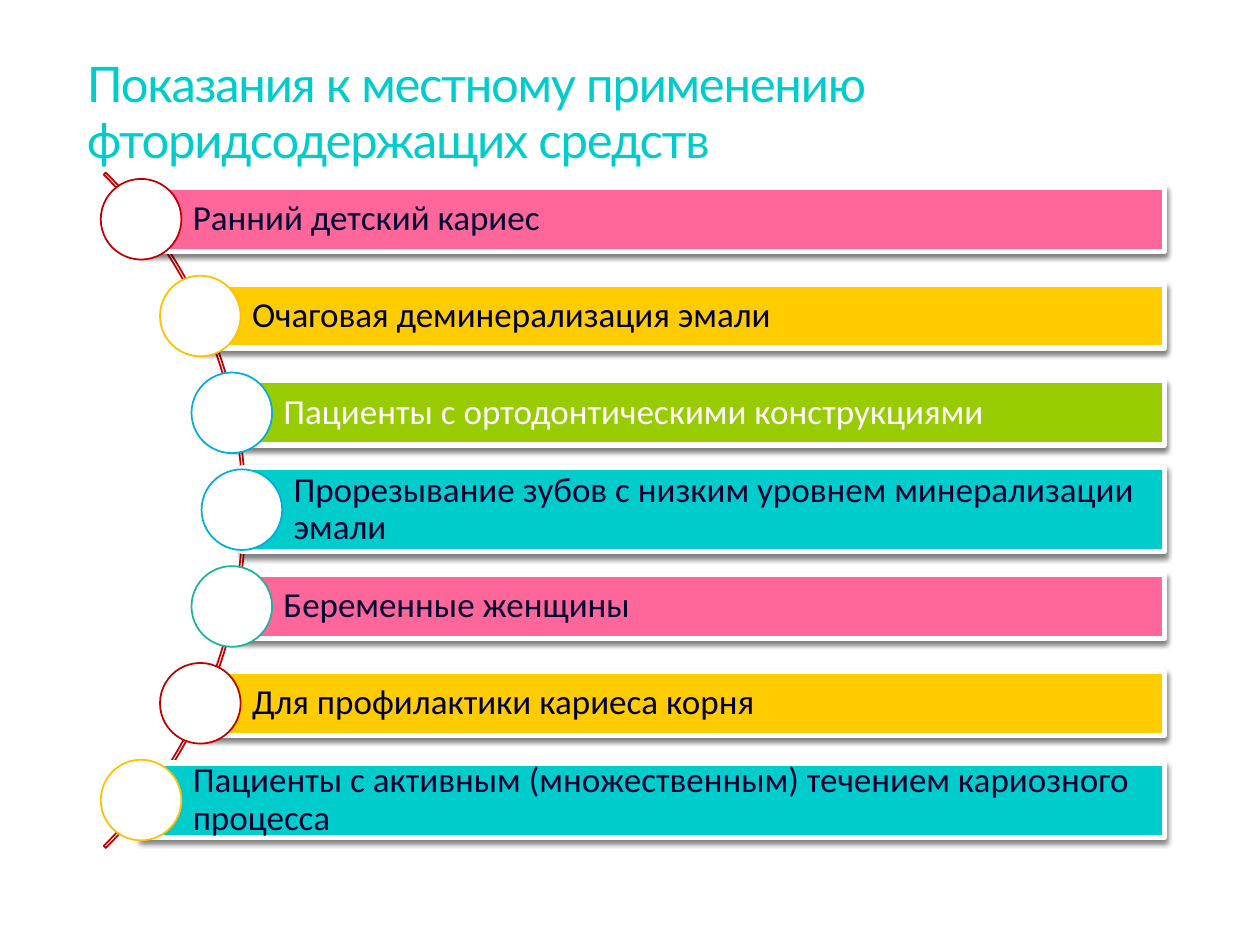
from lxml.etree import SubElement
from pptx import Presentation
from pptx.dml.color import RGBColor
from pptx.enum.shapes import MSO_SHAPE
from pptx.enum.text import MSO_ANCHOR, PP_ALIGN
from pptx.oxml.ns import qn
from pptx.util import Inches, Pt

HUES = {
    "teal": "00CCCC", "pink": "FF6699", "gold": "FFCC00", "lime": "99CC00",
    "navy": "000033", "white": "FFFFFF", "black": "000000",
    "red": "C00000", "amber": "FFC000", "blue": "00ADDC", "green": "1AB39F",
}
TITLE = "Показания к местному применению фторидсодержащих средств"

# Text, bar left, bar height, bar fill, text colour, ring colour
ROWS = [
    ("Ранний детский кариес", 1.12, 0.51, "pink", "navy", "red"),
    ("Очаговая деминерализация эмали", 1.59, 0.51, "gold", "navy", "amber"),
    ("Пациенты с ортодонтическими конструкциями",
     1.84, 0.51, "lime", "white", "blue"),
    ("Прорезывание зубов с низким уровнем минерализации эмали",
     1.92, 0.67, "teal", "navy", "blue"),
    ("Беременные женщины", 1.84, 0.51, "pink", "navy", "green"),
    ("Для профилактики кариеса корня", 1.59, 0.51, "gold", "navy", "red"),
    ("Пациенты с активным (множественным) течением кариозного процесса",
     1.12, 0.59, "teal", "navy", "amber"),
]
FIRST, LAST = 1.74, 6.35  # centres of the first and last rows
RIGHT = 9.24
RING = 0.64


def tint(name):
    return RGBColor.from_string(HUES[name])


def add_form(slide, kind, box, fill, line, width):
    form = slide.shapes.add_shape(kind, *map(Inches, box))
    form.shadow.inherit = False
    if fill:
        form.fill.solid()
        form.fill.fore_color.rgb = tint(fill)
    else:
        form.fill.background()
    form.line.color.rgb = tint(line)
    form.line.width = Pt(width)
    return form


def set_text(frame, text, font, size, hue, pads, space):
    frame.word_wrap = True
    (frame.margin_left, frame.margin_top,
     frame.margin_right, frame.margin_bottom) = map(Inches, pads)
    frame.text = text
    para = frame.paragraphs[0]
    para.alignment = PP_ALIGN.LEFT
    para.line_spacing = space
    run = para.runs[0]
    run.font.name = font
    run.font.size = Pt(size)
    run.font.color.rgb = tint(hue)
    return run


def add_shade(form):
    # Soft shadow straight below the bar
    list_el = form._element.spPr.find(qn("a:effectLst"))
    shade = SubElement(list_el, qn("a:outerShdw"), blurRad=str(Pt(3)),
                       dist=str(Pt(2)), dir="5400000", rotWithShape="0")
    color = SubElement(shade, qn("a:srgbClr"), val=HUES["black"])
    SubElement(color, qn("a:alpha"), val="50000")


def add_title(slide):
    box = slide.shapes.add_textbox(*map(Inches, (0.69, 0.4, 8.62, 1.03)))
    run = set_text(box.text_frame, TITLE, "Lato", 28, "teal",
                   (0, 0.05, 0, 0.05), Pt(32))
    run.font._element.set("spc", "-70")


def add_arc(slide):
    arc = add_form(slide, MSO_SHAPE.BLOCK_ARC, (-5.63, 0.26, 7.58, 7.58),
                   None, "red", 1)
    for i, value in enumerate((189, 27, 0.003)):
        arc.adjustments[i] = value


def add_row(slide, mid, text, left, high, fill, ink, ring):
    bar = add_form(slide, MSO_SHAPE.RECTANGLE,
                   (left, mid - high / 2, RIGHT - left, high),
                   fill, "white", 3)
    add_shade(bar)
    set_text(bar.text_frame, text, "Calibri", 20, ink,
             (0.41, 0.06, 0.06, 0.06), 0.9)
    bar.text_frame.vertical_anchor = MSO_ANCHOR.MIDDLE
    # The ring is centred on the left edge of the bar
    add_form(slide, MSO_SHAPE.OVAL,
             (left - RING / 2, mid - RING / 2, RING, RING), "white", ring, 1)


def main():
    deck = Presentation()
    deck.slide_width, deck.slide_height = Inches(10), Inches(7.5)
    slide = deck.slides.add_slide(deck.slide_layouts[6])
    add_title(slide)
    add_arc(slide)
    step = (LAST - FIRST) / (len(ROWS) - 1)
    for i, row in enumerate(ROWS):
        add_row(slide, FIRST + i * step, *row)
    deck.save("out.pptx")


if __name__ == "__main__":
    main()
